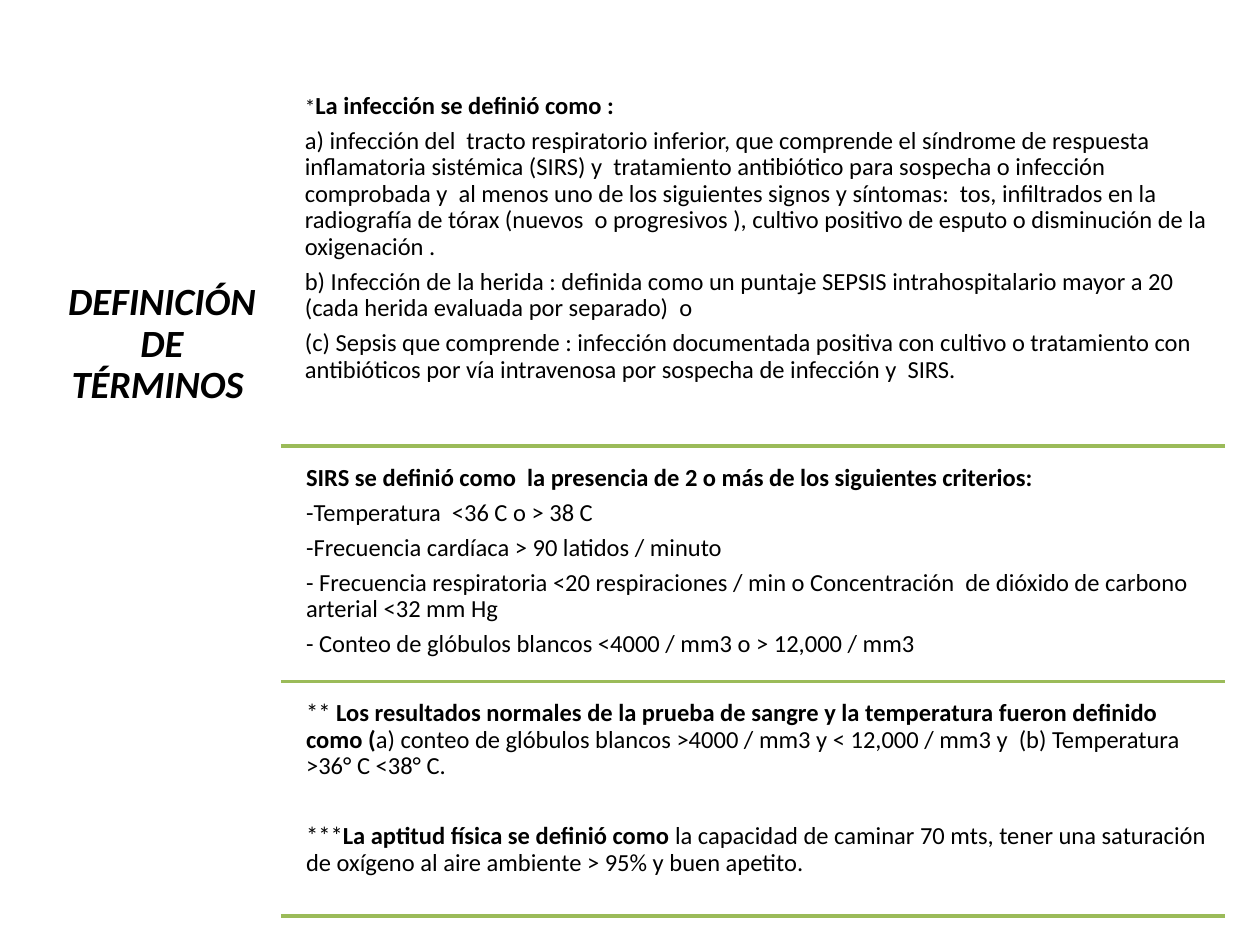
from lxml.etree import SubElement
from pptx import Presentation
from pptx.dml.color import RGBColor
from pptx.enum.shapes import MSO_CONNECTOR as Connector
from pptx.enum.text import MSO_ANCHOR as Anchor, MSO_AUTO_SIZE as AutoSize, PP_ALIGN as Align
from pptx.oxml.ns import qn
from pptx.util import Inches, Pt

COLORS = {"text": "000000", "rule": "9BBB59"}
FONT = "Calibri"
BODY_SIZE = 14
GAP = 4.9
BLANK_LINE_GAP = 25

INFECTION = [
    [("*", False, 12), ("La infección se definió como :", True)],
    [("a) infección del  tracto respiratorio inferior, que comprende el síndrome de "
      "respuesta inflamatoria sistémica (SIRS) y  tratamiento antibiótico para sospecha "
      "o infección comprobada y  al menos uno de los siguientes signos y síntomas:  tos, "
      "infiltrados en la radiografía de tórax (nuevos  o progresivos ), cultivo positivo "
      "de esputo o disminución de la oxigenación .", False)],
    [("b) Infección de la herida : definida como un puntaje SEPSIS intrahospitalario "
      "mayor a 20 (cada herida evaluada por separado)  o", False)],
    [("(c) Sepsis que comprende : infección documentada positiva con cultivo o "
      "tratamiento con antibióticos por vía intravenosa por sospecha de infección y  "
      "SIRS.", False)],
]
SIRS = [
    [("SIRS se definió como  la presencia de 2 o más de los siguientes criterios:", True)],
    [("-Temperatura  <36 C o > 38 C", False)],
    [("-Frecuencia cardíaca > 90 latidos / minuto", False)],
    [("- Frecuencia respiratoria <20 respiraciones / min o Concentración  de dióxido de "
      "carbono arterial <32 mm Hg", False)],
    [("- Conteo de glóbulos blancos <4000 / mm3 o > 12,000 / mm3", False)],
]
NORMAL_AND_FITNESS = [
    [("** ", False),
     ("Los resultados normales de la prueba de sangre y la temperatura fueron definido "
      "como (", True),
     ("a) conteo de glóbulos blancos >4000 / mm3 y < 12,000 / mm3 y  (b) Temperatura "
      ">36° C <38° C.", False)],
    [("***", False), ("La aptitud física se definió como", True),
     (" la capacidad de caminar 70 mts, tener una saturación de oxígeno al aire ambiente "
      "> 95% y buen apetito.", False)],
]
SECTIONS = [
    (0.69, 2.86, 0.05, GAP, INFECTION),
    (3.63, 1.78, 0.06, GAP, SIRS),
    (5.5, 1.78, 0.06, BLANK_LINE_GAP, NORMAL_AND_FITNESS),
]
RULE_TOPS = [3.54, 5.41, 7.27]


def format_frame(frame, margin):
    """Give a text frame fixed size, wrapping, top anchor and equal margins."""
    frame.word_wrap = True
    frame.auto_size = AutoSize.NONE
    frame.vertical_anchor = Anchor.TOP
    frame.margin_left = frame.margin_right = Inches(margin)
    frame.margin_top = frame.margin_bottom = Inches(margin)


def format_paragraph(paragraph, size, align, gap):
    """Set the shared font and spacing of a paragraph."""
    paragraph.alignment = align
    paragraph.line_spacing = 0.9
    paragraph.space_before = Pt(0)
    paragraph.space_after = Pt(gap)
    paragraph.font.name = FONT
    paragraph.font.size = Pt(size)
    paragraph.font.color.rgb = RGBColor.from_string(COLORS["text"])


def set_title(slide, text):
    """Place and format the slide title in the left column."""
    title = slide.shapes.title
    title.left, title.top = Inches(0.35), Inches(0.6)
    title.width, title.height = Inches(1.87), Inches(6.77)
    frame = title.text_frame
    frame.text = text
    format_frame(frame, 0.1)
    frame.margin_top = Inches(1.64)
    paragraph = frame.paragraphs[0]
    format_paragraph(paragraph, 22, Align.CENTER, 0)
    paragraph.font.bold = paragraph.font.italic = True


def add_section(slide, top, height, margin, gap, paragraphs):
    """Add one block of definitions in the right column."""
    box = slide.shapes.add_textbox(Inches(2.37), Inches(top), Inches(7.36), Inches(height))
    frame = box.text_frame
    format_frame(frame, margin)
    for index, pieces in enumerate(paragraphs):
        paragraph = frame.add_paragraph() if index else frame.paragraphs[0]
        format_paragraph(paragraph, BODY_SIZE, Align.LEFT, gap)
        for text, bold, *size in pieces:
            run = paragraph.add_run()
            run.text = text
            run.font.bold = bold
            if size:
                run.font.size = Pt(size[0])


def add_rule(slide, top):
    """Add a horizontal rule under a section."""
    rule = slide.shapes.add_connector(
        Connector.STRAIGHT, Inches(2.23), Inches(top), Inches(9.72), Inches(top))
    rule.line.color.rgb = RGBColor.from_string(COLORS["rule"])
    rule.line.width = Pt(2)
    SubElement(rule._element.spPr, qn("a:effectLst"))


def main():
    """Build and save the slide."""
    presentation = Presentation()
    presentation.slide_width, presentation.slide_height = Inches(10), Inches(7.5)
    slide = presentation.slides.add_slide(presentation.slide_layouts[5])
    set_title(slide, "DEFINICIÓN DE TÉRMINOS ")
    for section, rule_top in zip(SECTIONS, RULE_TOPS):
        add_section(slide, *section)
        add_rule(slide, rule_top)
    presentation.save("out.pptx")


if __name__ == "__main__":
    main()
